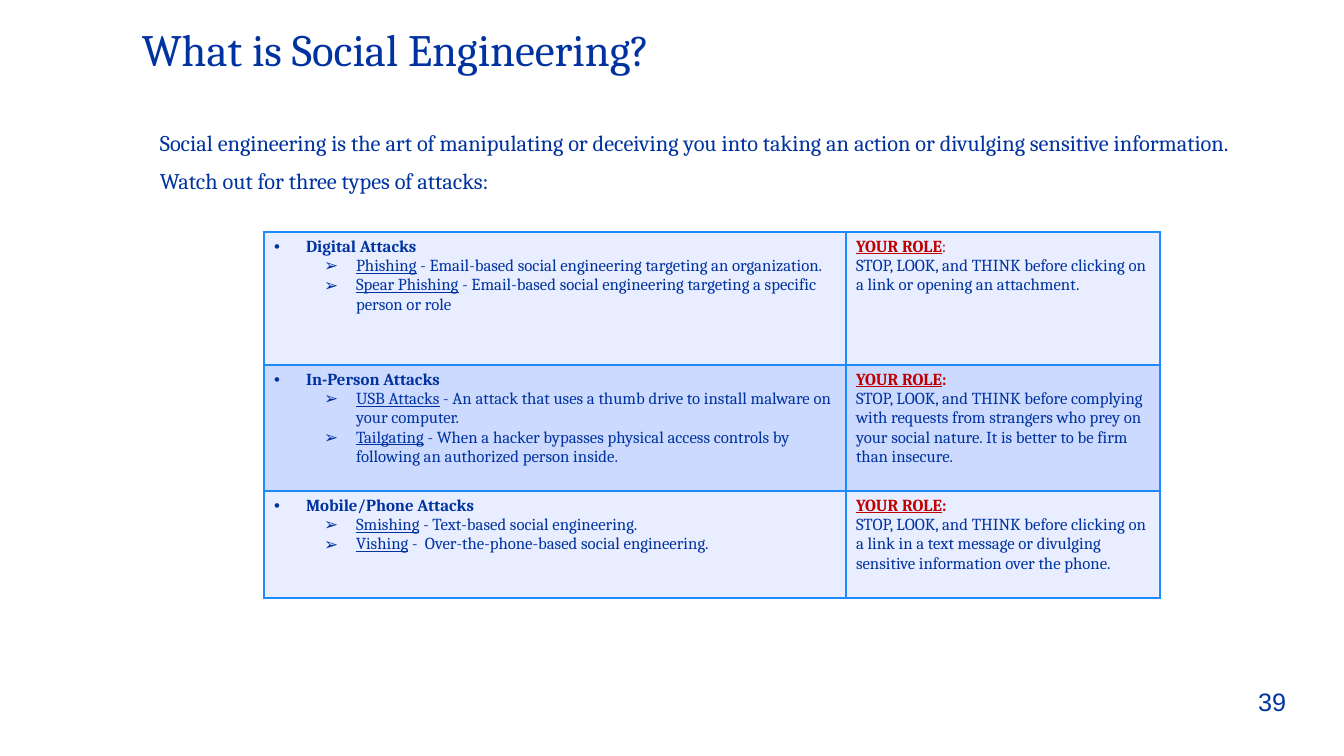
"""Builds the slide that explains social engineering attacks and the reader's role."""
from dataclasses import dataclass

from lxml.etree import SubElement
from pptx import Presentation
from pptx.dml.color import RGBColor
from pptx.enum.text import MSO_ANCHOR, PP_ALIGN
from pptx.oxml.ns import qn
from pptx.slide import Slide
from pptx.table import _Cell
from pptx.text.text import TextFrame, _Paragraph
from pptx.util import Emu, Pt

PX = 914400 / 100.8


@dataclass(frozen=True)
class Theme:
    blue: str = "0033A0"
    red: str = "C00000"
    border: str = "1E8AFF"
    bands: tuple[str, ...] = ("E8EDFF", "CDDAFF")
    serif: str = "Cambria"
    sans: str = "Arial"
    title: int = 32
    body: int = 16
    cell: int = 12
    number: int = 18


@dataclass(frozen=True)
class Box:
    left: int
    top: int
    width: int
    height: int


@dataclass(frozen=True)
class Attack:
    name: str
    meaning: str


@dataclass(frozen=True)
class AttackGroup:
    heading: str
    attacks: tuple[Attack, ...]
    role: str
    height: int
    bold_colon: bool = True


THEME = Theme()
COLUMNS = (582, 314)
GROUPS = (
    AttackGroup(
        "Digital Attacks",
        (
            Attack("Phishing", " - Email-based social engineering targeting an organization."),
            Attack("Spear Phishing", " - Email-based social engineering targeting a specific person or role"),
        ),
        "STOP, LOOK, and THINK before clicking on a link or opening an attachment.",
        133,
        bold_colon=False,
    ),
    AttackGroup(
        "In-Person Attacks",
        (
            Attack("USB Attacks", " - An attack that uses a thumb drive to install malware on your computer."),
            Attack("Tailgating", " - When a hacker bypasses physical access controls by following an authorized person inside."),
        ),
        "STOP, LOOK, and THINK before complying with requests from strangers who prey on your social nature. "
        "It is better to be firm than insecure.",
        126,
    ),
    AttackGroup(
        "Mobile/Phone Attacks",
        (
            Attack("Smishing", " - Text-based social engineering."),
            Attack("Vishing", " -  Over-the-phone-based social engineering."),
        ),
        "STOP, LOOK, and THINK before clicking on a link in a text message or divulging sensitive information "
        "over the phone.",
        107,
    ),
)


def px(n: int) -> Emu:
    return Emu(round(n * PX))


def add_run(p: _Paragraph, text: str, size: int, color: str = THEME.blue, font: str = THEME.serif,
            bold: bool = False, underline: bool = False) -> None:
    r = p.add_run()
    r.text = text
    r.font.size = Pt(size)
    r.font.name = font
    r.font.color.rgb = RGBColor.from_string(color)
    r.font.bold = bold
    r.font.underline = underline


def add_text(s: Slide, box: Box) -> TextFrame:
    sp = s.shapes.add_textbox(px(box.left), px(box.top), px(box.width), px(box.height))
    tf = sp.text_frame
    tf.word_wrap = True
    return tf


def add_bullet(p: _Paragraph, char: str, indent: int, level: int = 0) -> None:
    p.level = level
    pPr = p._p.get_or_add_pPr()
    pPr.set("marL", str(px(indent)))
    pPr.set("indent", str(-px(32)))
    SubElement(pPr, qn("a:buFont"), typeface=THEME.sans)
    SubElement(pPr, qn("a:buChar"), char=char)


def style_cell(cell: _Cell, fill: str) -> None:
    tcPr = cell._tc.get_or_add_tcPr()
    for side in ("lnL", "lnR", "lnT", "lnB"):
        ln = SubElement(tcPr, qn(f"a:{side}"), w=str(Pt(1)))
        solid = SubElement(ln, qn("a:solidFill"))
        SubElement(solid, qn("a:srgbClr"), val=THEME.border)
    cell.fill.solid()
    cell.fill.fore_color.rgb = RGBColor.from_string(fill)


def fill_attacks(tf: TextFrame, group: AttackGroup) -> None:
    p = tf.paragraphs[0]
    add_bullet(p, "•", 32)
    add_run(p, group.heading, THEME.cell, bold=True)
    for attack in group.attacks:
        p = tf.add_paragraph()
        add_bullet(p, "➢", 82, level=1)
        add_run(p, attack.name, THEME.cell, underline=True)
        add_run(p, attack.meaning, THEME.cell)


def fill_role(tf: TextFrame, group: AttackGroup) -> None:
    p = tf.paragraphs[0]
    add_run(p, "YOUR ROLE", THEME.cell, THEME.red, bold=True, underline=True)
    add_run(p, ":", THEME.cell, THEME.red, bold=group.bold_colon)
    add_run(tf.add_paragraph(), group.role, THEME.cell)


def add_attack_table(s: Slide, left: int, top: int) -> None:
    height = sum(group.height for group in GROUPS)
    table = s.shapes.add_table(len(GROUPS), len(COLUMNS), px(left), px(top),
                               px(sum(COLUMNS)), px(height)).table
    table.first_row = False
    table.horz_banding = False
    for column, width in zip(table.columns, COLUMNS):
        column.width = px(width)
    for i, (row, group) in enumerate(zip(table.rows, GROUPS)):
        row.height = px(group.height)
        for cell, fill_text in zip(row.cells, (fill_attacks, fill_role)):
            style_cell(cell, THEME.bands[i % len(THEME.bands)])
            fill_text(cell.text_frame, group)


def main() -> None:
    prs = Presentation()
    prs.slide_width, prs.slide_height = px(1344), px(756)
    s = prs.slides.add_slide(prs.slide_layouts[6])

    tf = add_text(s, Box(150, 127, 1126, 106))
    intro = (
        "Social engineering is the art of manipulating or deceiving you into taking an action or divulging "
        "sensitive information.",
        "Watch out for three types of attacks:",
    )
    for i, line in enumerate(intro):
        p = tf.add_paragraph() if i else tf.paragraphs[0]
        p.line_spacing = 0.9
        p.space_before = Pt(10 if i else 0)
        add_run(p, line, THEME.body)

    tf = add_text(s, Box(132, 19, 1246, 66))
    tf.vertical_anchor = MSO_ANCHOR.MIDDLE
    p = tf.paragraphs[0]
    p.line_spacing = 0.9
    add_run(p, "What is Social Engineering?", THEME.title)

    p = add_text(s, Box(1219, 681, 77, 40)).paragraphs[0]
    p.alignment = PP_ALIGN.RIGHT
    add_run(p, "39", THEME.number, font=THEME.sans)

    add_attack_table(s, 264, 232)
    prs.save("out.pptx")


if __name__ == "__main__":
    main()
